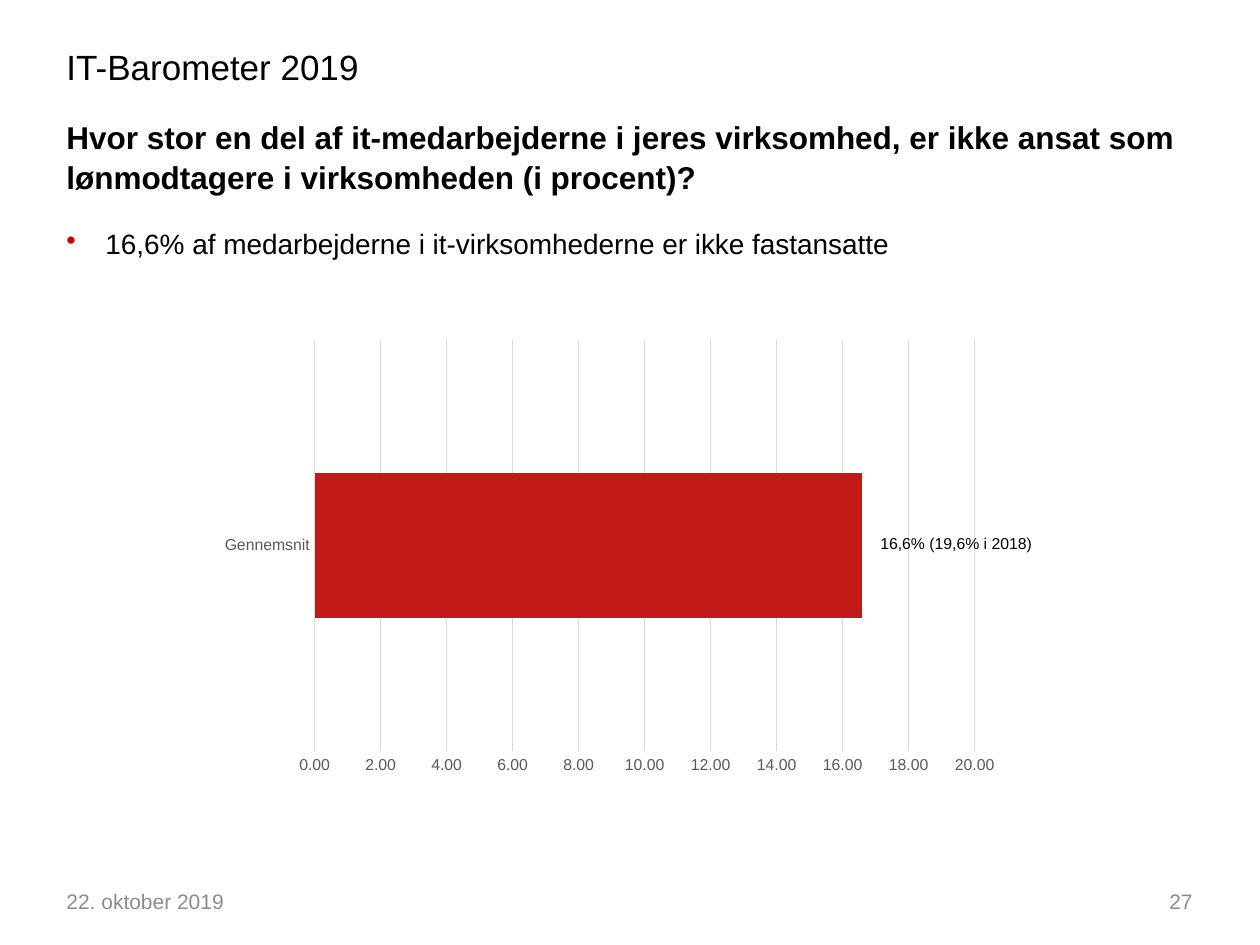
from lxml import etree
from pptx import Presentation
from pptx import util as u
from pptx.chart.data import CategoryChartData
from pptx.dml.color import RGBColor
from pptx.enum import chart as charts, text
from pptx.oxml import parse_xml
from pptx.oxml.ns import nsdecls, qn

EMU_PER_PX = 914400 / 126
BLACK = RGBColor(0x00, 0x00, 0x00)
FOOTER_GRAY = RGBColor(0x8C, 0x8C, 0x8C)
AXIS_GRAY = RGBColor(0x59, 0x59, 0x59)
GRID_GRAY = RGBColor(0xD9, 0xD9, 0xD9)
BAR_RED = RGBColor(0xC2, 0x19, 0x19)
BULLET_RED = RGBColor(0xC0, 0x00, 0x00)
MARGIN = 54


def px(length):
    return u.Emu(round(length * EMU_PER_PX))


def format_font(font, size, color=BLACK, bold=False):
    font.name = "Arial"
    font.size = u.Pt(size)
    font.color.rgb = color
    font.bold = bold


def write_text(frame, content, size, color=BLACK, bold=False, spacing=1.0,
               align=text.PP_ALIGN.LEFT, bullet=None):
    paragraph = frame.paragraphs[0]
    paragraph.alignment = align
    paragraph.line_spacing = spacing
    if bullet is not None:
        properties = paragraph._p.get_or_add_pPr()
        indent = px(39)
        properties.set("marL", str(indent))
        properties.set("indent", str(-indent))
        bullet_color = etree.SubElement(properties, qn("a:buClr"))
        etree.SubElement(bullet_color, qn("a:srgbClr"), val=str(bullet))
        etree.SubElement(properties, qn("a:buChar"), char="•")
    run = paragraph.add_run()
    run.text = content
    format_font(run.font, size, color, bold)


class SlideBuilder:
    def __init__(self, slide):
        self.slide = slide

    def add_text(self, content, left, top, width, height, middle=False,
                 wrap=True, **style):
        box = self.slide.shapes.add_textbox(px(left), px(top), px(width), px(height))
        frame = box.text_frame
        frame.word_wrap = wrap
        if not wrap:
            frame.auto_size = text.MSO_AUTO_SIZE.SHAPE_TO_FIT_TEXT
        if middle:
            frame.vertical_anchor = text.MSO_ANCHOR.MIDDLE
        write_text(frame, content, **style)

    def add_footer(self, content, left, align):
        self.add_text(content, left, 876, 294, 50, middle=True, size=12,
                      color=FOOTER_GRAY, align=align)

    def add_bar_chart(self, categories, values, left, top, width, height):
        data = CategoryChartData(number_format="0.00")
        data.categories = categories
        data.add_series("Series 1", values)
        chart = self.slide.shapes.add_chart(
            charts.XL_CHART_TYPE.BAR_CLUSTERED,
            px(left), px(top), px(width), px(height), data).chart
        chart.has_legend = False
        chart.has_title = False
        format_font(chart.font, 10)

        # Bars
        plot = chart.plots[0]
        plot.gap_width = 182
        plot.vary_by_categories = False
        fill = plot.series[0].format.fill
        fill.solid()
        fill.fore_color.rgb = BAR_RED

        # Axes and gridlines
        value_axis, category_axis = chart.value_axis, chart.category_axis
        for axis in (value_axis, category_axis):
            axis.major_tick_mark = charts.XL_TICK_MARK.NONE
            axis.minor_tick_mark = charts.XL_TICK_MARK.NONE
            format_font(axis.tick_labels.font, 9, AXIS_GRAY)
        value_axis.minimum_scale, value_axis.maximum_scale = 0, 20
        value_axis.major_unit = 2
        value_axis.tick_labels.number_format = "0.00"
        value_axis.tick_labels.number_format_is_linked = False
        value_axis.format.line.fill.background()
        value_axis.has_major_gridlines = True
        category_axis.has_major_gridlines = False
        for line in (value_axis.major_gridlines.format.line, category_axis.format.line):
            line.color.rgb = GRID_GRAY
            line.width = u.Pt(0.75)

        # Inner plot area, as shares of the chart
        shares = {"x": 0.13, "y": 0.02, "w": 0.82, "h": 0.91}
        modes = '<c:xMode val="edge"/><c:yMode val="edge"/>'
        sizes = "".join(f'<c:{name} val="{share}"/>' for name, share in shares.items())
        plot_area = chart._chartSpace.chart.plotArea
        for old_layout in plot_area.findall(qn("c:layout")):
            plot_area.remove(old_layout)
        plot_area.insert(0, parse_xml(
            f'<c:layout {nsdecls("c")}><c:manualLayout><c:layoutTarget val="inner"/>'
            f'{modes}{sizes}</c:manualLayout></c:layout>'))


def main():
    presentation = Presentation()
    presentation.slide_width = px(1260)
    presentation.slide_height = px(945)
    slide = presentation.slides.add_slide(presentation.slide_layouts[6])
    builder = SlideBuilder(slide)

    # Footer
    builder.add_footer("22. oktober 2019", MARGIN, text.PP_ALIGN.LEFT)
    builder.add_footer("27", 911, text.PP_ALIGN.RIGHT)

    # Headings and finding
    builder.add_text("IT-Barometer 2019", MARGIN, 37, 399, 50, size=20, spacing=1.05)
    builder.add_text(
        "Hvor stor en del af it-medarbejderne i jeres virksomhed, er ikke ansat "
        "som lønmodtagere i virksomheden (i procent)?",
        MARGIN, 110, 1134, 95, size=18, bold=True, spacing=1.05)
    builder.add_text("16,6% af medarbejderne i it-virksomhederne er ikke fastansatte",
                     MARGIN, 219, 1037, 112, size=16, spacing=1.05, bullet=BULLET_RED)

    # Chart and its label
    builder.add_bar_chart(["Gennemsnit"], [16.6], 210, 331, 805, 452)
    builder.add_text("16,6% (19,6% i 2018)", 868, 528, 179, 32, wrap=False, size=9)

    presentation.save("out.pptx")


if __name__ == "__main__":
    main()
